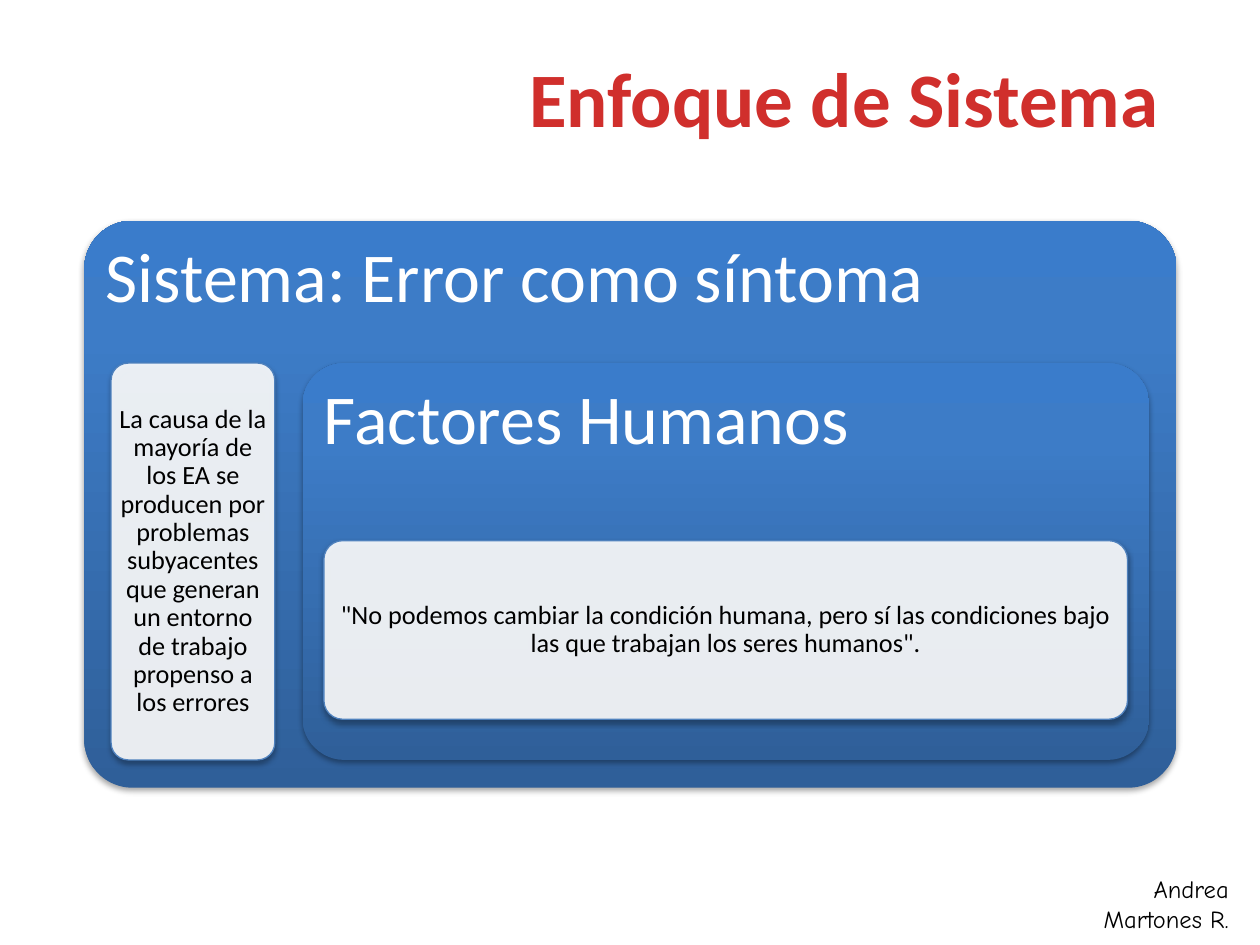
from lxml.etree import SubElement
from pptx import Presentation
from pptx.dml.color import RGBColor
from pptx.enum.shapes import MSO_SHAPE
from pptx.enum.text import MSO_ANCHOR, PP_ALIGN
from pptx.oxml.ns import qn
from pptx.util import Cm, Pt

# Content: boxes are (kind, left, top, width, height, text), in cm, back to front
TITLE = (9.91, 0.36, 14.22, 3.18, "Enfoque de Sistema")
AUTHOR = (21.44, 17.5, 3.58, 0.86, "Andrea Martones R.")
BOXES = [
    ("system", 1.7, 4.45, 22.02, 11.43, "Sistema: Error como síntoma"),
    ("note", 2.24, 7.32, 3.3, 8, "La causa de la mayoría de los EA se producen por problemas "
     "subyacentes que generan un entorno de trabajo propenso a los errores"),
    ("factors", 6.1, 7.32, 17.07, 8, "Factores Humanos"),
    ("note", 6.53, 10.9, 16.2, 3.6, '"No podemos cambiar la condición humana, pero sí las '
     'condiciones bajo las que trabajan los seres humanos".'),
]

THEME = {
    "font": "Calibri", "author_font": "Comic Neue",
    "title": "D02F2C", "text": "000000", "light": "FFFFFF", "line": "4F81BD",
    "gradient": [(0, "2F5F99"), (80, "3D7CC7"), (100, "3A7CCB")],
    "title_size": 44, "heading_size": 40, "note_size": 15, "author_size": 14,
}
# Kind: corner ratio, text margin in cm
STYLES = {"system": (0.085, 0.43), "factors": (0.105, 0.43), "note": (0.105, 0.15)}
CORNER_INSET = 0.29  # share of the corner radius that the shape adds to its margins


def write(tf, text, size, color, align, font=THEME["font"], bold=False):
    tf.word_wrap = True
    p = tf.paragraphs[0]
    p.text = text
    p.alignment = align
    p.font.name, p.font.size, p.font.bold = font, Pt(size), bold
    p.font.color.rgb = RGBColor.from_string(color)
    return p


def add_color(parent, color, alpha=None):
    clr = SubElement(parent, qn("a:srgbClr"), val=color)
    if alpha is not None:
        SubElement(clr, qn("a:alpha"), val=str(alpha * 1000))


def add_shadow(sp):
    sp.shadow.inherit = False
    effects = sp._element.spPr.find(qn("a:effectLst"))
    shadow = SubElement(effects, qn("a:outerShdw"), blurRad=str(Pt(3.1)),
                        dist=str(Pt(1.8)), dir="5400000", rotWithShape="0")
    add_color(shadow, "000000", 35)


def fill_gradient(sp):
    sp.fill.gradient()
    sp.fill.gradient_angle = 90
    stops = sp._element.spPr.find(qn("a:gradFill")).find(qn("a:gsLst"))
    for stop in list(stops):
        stops.remove(stop)
    for pos, color in THEME["gradient"]:
        add_color(SubElement(stops, qn("a:gs"), pos=str(pos * 1000)), color)
    sp.line.fill.background()


def fill_note(sp):
    sp.fill.solid()
    sp.fill.fore_color.rgb = RGBColor.from_string(THEME["light"])
    clr = sp._element.spPr.find(qn("a:solidFill"))[0]
    SubElement(clr, qn("a:alpha"), val="90000")
    sp.line.color.rgb = RGBColor.from_string(THEME["line"])
    sp.line.width = Pt(0.75)


def add_box(s, kind, left, top, width, height, text):
    corner, margin = STYLES[kind]
    sp = s.shapes.add_shape(MSO_SHAPE.ROUNDED_RECTANGLE,
                            Cm(left), Cm(top), Cm(width), Cm(height))
    sp.adjustments[0] = corner
    tf = sp.text_frame
    inset = Cm(margin - CORNER_INSET * corner * min(width, height))
    tf.margin_left = tf.margin_top = tf.margin_right = tf.margin_bottom = inset
    if kind == "note":
        fill_note(sp)
        tf.vertical_anchor = MSO_ANCHOR.MIDDLE
        p = write(tf, text, THEME["note_size"], THEME["text"], PP_ALIGN.CENTER)
    else:
        fill_gradient(sp)
        tf.vertical_anchor = MSO_ANCHOR.TOP
        p = write(tf, text, THEME["heading_size"], THEME["light"], PP_ALIGN.LEFT)
    p.line_spacing = 0.9
    add_shadow(sp)


def add_text(s, left, top, width, height, text, *style, **options):
    tf = s.shapes.add_textbox(Cm(left), Cm(top), Cm(width), Cm(height)).text_frame
    write(tf, text, *style, **options)
    return tf


def main():
    prs = Presentation()
    prs.slide_width, prs.slide_height = Cm(25.4), Cm(19.05)
    s = prs.slides.add_slide(prs.slide_layouts[6])

    # Title
    tf = add_text(s, *TITLE, THEME["title_size"], THEME["title"], PP_ALIGN.CENTER, bold=True)
    tf.vertical_anchor = MSO_ANCHOR.MIDDLE

    # Nested boxes
    for box in BOXES:
        add_box(s, *box)

    # Author
    add_text(s, *AUTHOR, THEME["author_size"], THEME["text"], PP_ALIGN.RIGHT,
             font=THEME["author_font"])

    prs.save("out.pptx")


if __name__ == "__main__":
    main()
